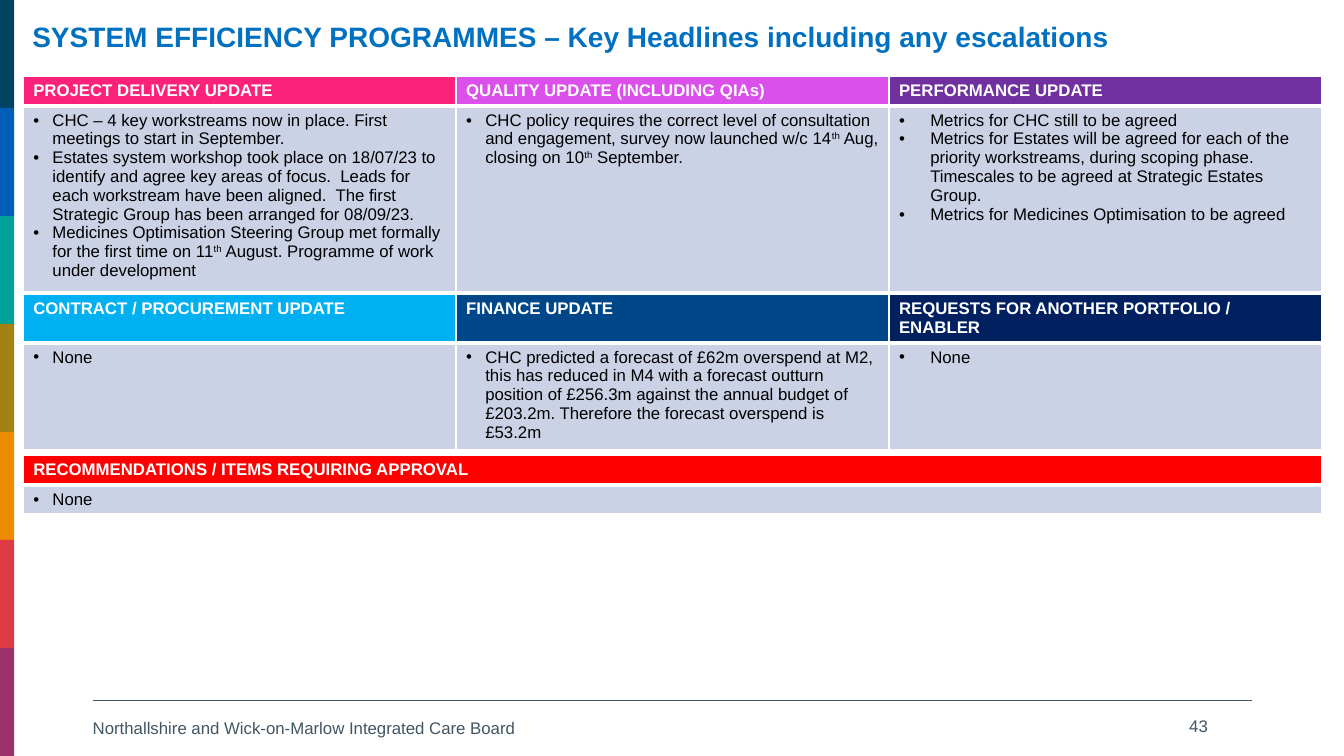
from lxml.etree import SubElement
from pptx import Presentation
from pptx.dml.color import RGBColor
from pptx.enum.shapes import MSO_CONNECTOR, MSO_SHAPE
from pptx.enum.text import MSO_ANCHOR, MSO_AUTO_SIZE, PP_ALIGN
from pptx.oxml.ns import qn
from pptx.util import Inches, Pt

WIDTH, HEIGHT = 13.33, 7.5
LEFT, SPAN = 0.23, 12.88
LINE = 0.29
BULLET, WIDE = 0.19, 0.31

HEX = {
    "white": "FFFFFF", "black": "000000", "title": "0070C0", "slate": "415563",
    "body": "CCD2E6", "pink": "FC227A", "violet": "DB50EA", "purple": "7030A0",
    "sky": "00B0F0", "blue": "00478A", "navy": "002060", "red": "FF0000",
}
STRIP = ["004461", "005EB8", "00A399", "A38213", "ED8B00", "DD3A44", "9A3269"]

# Each column: heading, colour, bullet indent, bullet texts (^ encloses superscripts)
UPDATES = [
    ("PROJECT DELIVERY UPDATE", "pink", BULLET, [
        "CHC – 4 key workstreams now in place. First meetings to start in September.",
        "Estates system workshop took place on 18/07/23 to identify and agree key areas "
        "of focus.  Leads for each workstream have been aligned.  The first Strategic "
        "Group has been arranged for 08/09/23.",
        "Medicines Optimisation Steering Group met formally for the first time on "
        "11^th^ August. Programme of work under development"]),
    ("QUALITY UPDATE (INCLUDING QIAs)", "violet", BULLET, [
        "CHC policy requires the correct level of consultation and engagement, survey "
        "now launched w/c 14^th^ Aug, closing on 10^th^ September."]),
    ("PERFORMANCE UPDATE", "purple", WIDE, [
        "Metrics for CHC still to be agreed",
        "Metrics for Estates will be agreed for each of the priority workstreams, during "
        "scoping phase. Timescales to be agreed at Strategic Estates Group.",
        "Metrics for Medicines Optimisation to be agreed"]),
]
SUPPORT = [
    ("CONTRACT / PROCUREMENT UPDATE", "sky", BULLET, ["None"]),
    ("FINANCE UPDATE", "blue", BULLET, [
        "CHC predicted a forecast of £62m overspend at M2, this has reduced in M4 with a "
        "forecast outturn position of £256.3m against the annual budget of £203.2m. "
        "Therefore the forecast overspend is £53.2m"]),
    ("REQUESTS FOR ANOTHER PORTFOLIO / ENABLER", "navy", WIDE, ["None"]),
]
APPROVAL = [("RECOMMENDATIONS / ITEMS REQUIRING APPROVAL", "red", BULLET, ["None"])]


def colour(name):
    return RGBColor.from_string(HEX.get(name, name))


def add_run(para, text, tint, size=12, bold=False, raised=False):
    run = para.add_run()
    run.text = text
    font = run.font
    font.name, font.size, font.bold = "Arial", Pt(size), bold
    font.color.rgb = colour(tint)
    if raised:
        font._element.set("baseline", "30000")


def add_bullet(para, text, indent):
    props = para._p.get_or_add_pPr()
    props.set("marL", str(Inches(indent)))
    props.set("indent", str(-Inches(indent)))
    SubElement(props, qn("a:buFont")).set("typeface", "Arial")
    SubElement(props, qn("a:buChar")).set("char", "•")
    for i, part in enumerate(text.split("^")):
        add_run(para, part, "black", raised=i % 2 == 1)


def paint_cell(cell, fill, top, base):
    """Give the cell white borders, with its own top and bottom weights, and a fill."""
    props = cell._tc.get_or_add_tcPr()
    for side, weight in (("L", 1), ("R", 1), ("T", top), ("B", base)):
        edge = SubElement(props, qn("a:ln" + side), w=str(Pt(weight)))
        solid = SubElement(edge, qn("a:solidFill"))
        SubElement(solid, qn("a:srgbClr"), val=HEX["white"])
    cell.fill.solid()
    cell.fill.fore_color.rgb = colour(fill)


def add_panel(slide, top, rows, items):
    """Add a table with a coloured heading over a bulleted cell for each item."""
    frame = slide.shapes.add_table(2, len(items), Inches(LEFT), Inches(top),
                                   Inches(SPAN), Inches(sum(rows)))
    table = frame.table
    table.first_row = table.horz_banding = False
    for row, height in zip(table.rows, rows):
        row.height = Inches(height)
    for i, (head, fill, indent, lines) in enumerate(items):
        table.columns[i].width = Inches(SPAN / len(items))
        cell, body = table.cell(0, i), table.cell(1, i)
        paint_cell(cell, fill, 1, 3)
        add_run(cell.text_frame.paragraphs[0], head, "white", bold=True)
        paint_cell(body, "body", 3, 1)
        for j, line in enumerate(lines):
            text = body.text_frame
            para = text.add_paragraph() if j else text.paragraphs[0]
            add_bullet(para, line, indent)


def add_strip(slide):
    step = HEIGHT / len(STRIP)
    for i, tint in enumerate(STRIP):
        bar = slide.shapes.add_shape(MSO_SHAPE.RECTANGLE, 0, Inches(i * step),
                                     Inches(0.14), Inches(step))
        bar.shadow.inherit = False
        bar.fill.solid()
        bar.fill.fore_color.rgb = colour(tint)
        bar.line.fill.background()


def add_rule(slide):
    y = Inches(6.95)
    rule = slide.shapes.add_connector(MSO_CONNECTOR.STRAIGHT, Inches(0.92), y,
                                      Inches(12.42), y)
    rule.line.color.rgb = colour("slate")
    rule.line.width = Pt(1)
    SubElement(rule._element.spPr, qn("a:effectLst"))


def add_note(slide, left, top, width, text, align):
    box = slide.shapes.add_textbox(Inches(left), Inches(top), Inches(width), Inches(0.3))
    frame = box.text_frame
    frame.word_wrap = True
    frame.margin_left = frame.margin_right = 0
    para = frame.paragraphs[0]
    para.alignment = align
    add_run(para, text, "slate")


def set_title(slide):
    title = slide.shapes.title
    title.left, title.top = Inches(0.32), Inches(0.23)
    title.width, title.height = Inches(12.69), Inches(0.53)
    frame = title.text_frame
    frame.margin_left = frame.margin_right = frame.margin_top = frame.margin_bottom = 0
    frame.vertical_anchor = MSO_ANCHOR.TOP
    frame.auto_size = MSO_AUTO_SIZE.NONE
    frame.word_wrap = True
    para = frame.paragraphs[0]
    para.alignment, para.line_spacing = PP_ALIGN.LEFT, 0.9
    add_run(para, "SYSTEM EFFICIENCY PROGRAMMES – Key Headlines including any escalations",
            "title", 20, True)


def main():
    deck = Presentation()
    deck.slide_width, deck.slide_height = Inches(WIDTH), Inches(HEIGHT)
    slide = deck.slides.add_slide(deck.slide_layouts[5])
    add_rule(slide)
    add_strip(slide)
    set_title(slide)
    add_panel(slide, 0.76, (LINE, 1.84), UPDATES)
    add_panel(slide, 4.52, (LINE, LINE), APPROVAL)
    add_panel(slide, 2.92, (0.48, 1.06), SUPPORT)
    add_note(slide, 8.98, 7.05, 3, "43", PP_ALIGN.RIGHT)
    add_note(slide, 0.92, 7.07, 8, "Northallshire and Wick-on-Marlow Integrated Care Board",
             PP_ALIGN.LEFT)
    deck.save("out.pptx")


if __name__ == "__main__":
    main()
